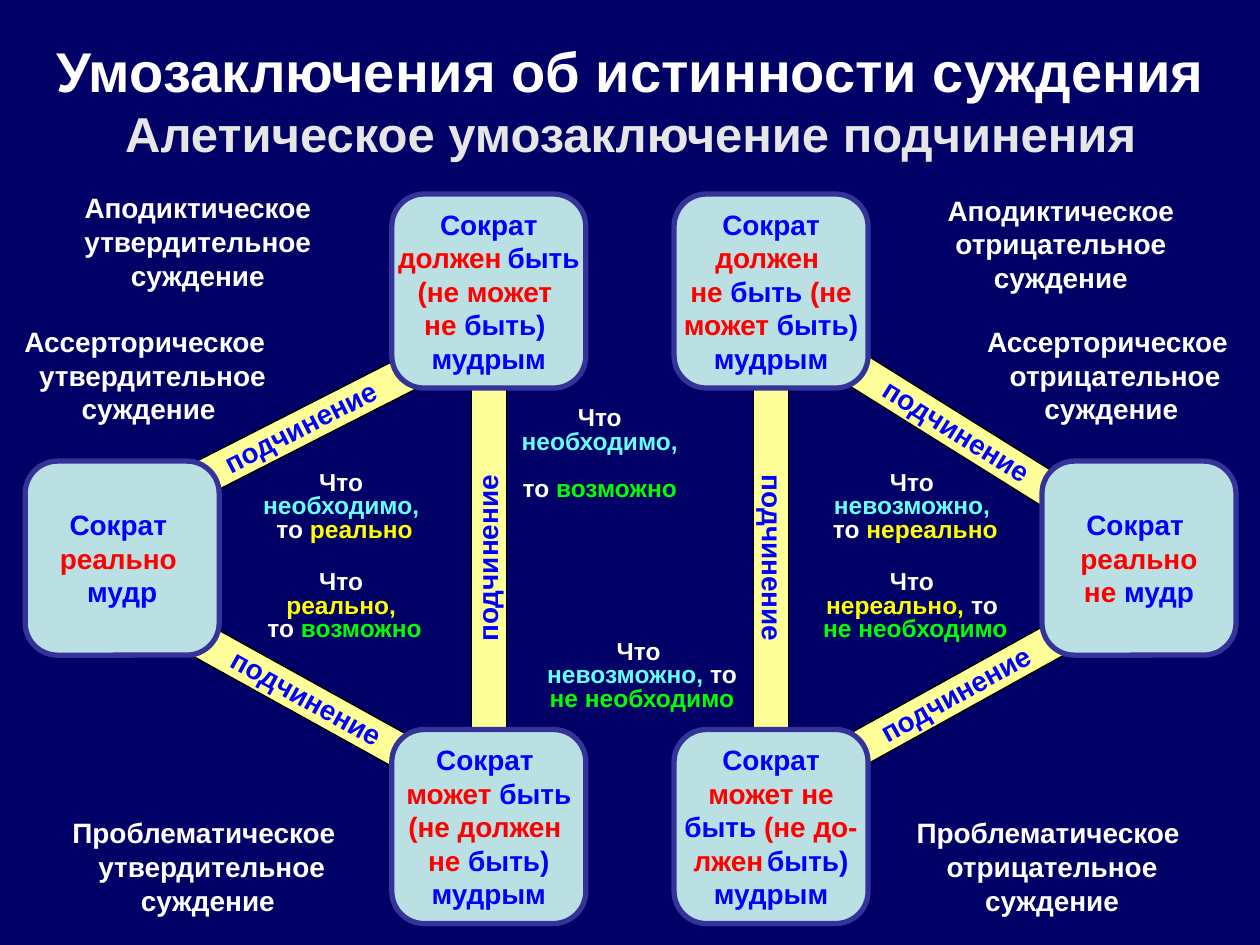
from pptx import Presentation
from pptx.dml.color import RGBColor
from pptx.enum.shapes import MSO_SHAPE
from pptx.enum.text import MSO_ANCHOR, PP_ALIGN
from pptx.util import Inches, Pt

HUES = {
    "back": "000066", "bar": "FFFF99", "black": "000000",
    "card": "BBE0E3", "edge": "333399", "blue": "0000FF",
    "red": "FF0000", "white": "FFFFFF", "gray": "E6E6E6",
    "cyan": "66FFFF", "gold": "FFFF00", "green": "00FF00",
}
SIDE = 1.54


def hue(name):
    return RGBColor.from_string(HUES[name])


def write(frame, runs, size, pads, wrap=True, anchor=MSO_ANCHOR.MIDDLE, gap=None):
    """Fill one centred paragraph; each run is (colour, text[, size])."""
    frame.word_wrap = wrap
    frame.vertical_anchor = anchor
    frame.margin_left = frame.margin_right = Inches(pads[0])
    frame.margin_top, frame.margin_bottom = Inches(pads[1]), Inches(pads[2])
    para = frame.paragraphs[0]
    para.alignment = PP_ALIGN.CENTER
    if gap:
        para.line_spacing = gap
    font = para.font
    font.name, font.size, font.bold = "Arial", Pt(size), True
    for tone, text, *own in runs:
        for i, line in enumerate(text.split("\n")):
            if i:
                para.add_line_break()
            if line:
                run = para.add_run()
                run.text = line
                run.font.color.rgb = hue(tone)
                if own:
                    run.font.size = Pt(own[0])


def block(slide, kind, box, fill, edge, width):
    shape = slide.shapes.add_shape(kind, *map(Inches, box))
    shape.shadow.inherit = False
    shape.fill.solid()
    shape.fill.fore_color.rgb = hue(fill)
    shape.line.color.rgb = hue(edge)
    shape.line.width = Pt(width)
    return shape


def add_bar(slide, box, turn, text):
    bar = block(slide, MSO_SHAPE.RECTANGLE, box, "bar", "black", 0.75)
    bar.rotation = turn
    write(bar.text_frame, [("blue", text)], 16, (0.1, 0.02, 0.05), wrap=False)


def add_card(slide, left, top, runs, pad, wrap):
    box = (left, top, SIDE, SIDE)
    card = block(slide, MSO_SHAPE.ROUNDED_RECTANGLE, box, "card", "edge", 3)
    write(card.text_frame, runs, 16, (pad, 0.05, 0.05), wrap)


def add_note(slide, box, runs):
    note = slide.shapes.add_textbox(*map(Inches, box))
    write(note.text_frame, runs, 14, (0.04, 0.05, 0.05),
          anchor=MSO_ANCHOR.TOP, gap=0.8)


def add_label(slide, box, text):
    label = slide.shapes.add_textbox(*map(Inches, box))
    write(label.text_frame, [("white", text)], 16, (0.1, 0.05, 0.05))


def add_title(slide, box):
    title = slide.shapes.title
    title.left, title.top, title.width, title.height = map(Inches, box)
    write(title.text_frame, [
        ("white", "Умозаключения об истинности суждения", 32),
        ("gray", " Алетическое умозаключение подчинения", 28),
    ], 32, (0.1, 0.05, 0.05))


def main():
    deck = Presentation()
    deck.slide_width, deck.slide_height = Inches(10), Inches(7.5)
    slide = deck.slides.add_slide(deck.slide_layouts[5])
    slide.background.fill.solid()
    slide.background.fill.fore_color.rgb = hue("back")
    add_title(slide, (0.11, 0.2, 9.79, 1.18))

    # Links between the cards
    word = "подчинение"
    for left, top, turn in [(1.34, 5.39, 29), (6.5, 5.39, 331),
                            (6.5, 3.27, 32), (1.3, 3.27, 333)]:
        add_bar(slide, (left, top, 2.12, 0.28), turn, " " + word)
    for left, turn in [(4.76, 90), (2.52, 270)]:
        add_bar(slide, (left, 4.29, 2.72, 0.28), turn, word)

    # Cards: outer and inner columns, three rows
    far_l, near_l, near_r, far_r = 0.2, 3.11, 5.35, 8.27
    high, mid, low = 1.54, 3.66, 5.79
    cards = [
        (near_l, high, 0, False, [
            ("blue", "Сократ\n"), ("red", "должен"), ("red", " ", 12),
            ("blue", "быть\n"), ("red", "(не может \nне"),
            ("blue", " быть) \nмудрым")]),
        (near_r, high, 0, False, [
            ("blue", "Сократ\n"), ("red", "должен \nне"), ("blue", " быть "),
            ("red", "(не\nможет "), ("blue", "быть)\nмудрым")]),
        (far_l, mid, 0.08, True, [
            ("blue", "Сократ \n"), ("red", "реально \n"), ("blue", "мудр")]),
        (far_r, mid, 0.08, True, [
            ("blue", "Сократ \n"), ("red", " реально \nне "), ("blue", "мудр")]),
        (near_l, low, 0, True, [
            ("blue", "Сократ \n"), ("red", "может"), ("blue", " быть "),
            ("red", "(не должен \nне"), ("blue", " быть) мудрым")]),
        (near_r, low, 0, True, [
            ("blue", "Сократ\n"), ("red", "может не\n"), ("blue", "быть "),
            ("red", "(не до-\nлжен"), ("red", " ", 8),
            ("blue", "быть)\nмудрым")]),
    ]
    for left, top, pad, wrap, runs in cards:
        add_card(slide, left, top, runs, pad, wrap)

    # Rules of inference beside the links
    notes = [
        (1.73, 3.7, 2.01, [("white", "Что \n"), ("cyan", "необходимо, \n"),
                           ("white", "то "), ("gold", "реально")]),
        (1.73, 4.49, 2.01, [("white", "Что \n"), ("gold", "реально, \n"),
                            ("white", "то "), ("green", "возможно")]),
        (6.26, 3.7, 2.01, [("white", "Что \n"), ("cyan", "невозможно, \n"),
                           ("white", "то "), ("gold", "нереально")]),
        (6.26, 4.49, 2.01, [("white", "Что \n"), ("gold", "нереально, "),
                            ("white", "то \n"), ("green", "не необходимо")]),
        (4.09, 3.19, 1.34, [("white", "Что "), ("cyan", "необходимо, \n"),
                            ("white", "то "), ("green", "возможно")]),
        (4.29, 5.04, 1.61, [("white", "Что \n"), ("cyan", "невозможно, "),
                            ("white", "то "), ("green", "не необходимо")]),
    ]
    for left, top, width, runs in notes:
        add_note(slide, (left, top, width, 0.63), runs)

    # Names of the judgements
    labels = [
        (0.39, 1.46, "Аподиктическое\nутвердительное\nсуждение"),
        (7.24, 1.48, "Аподиктическое\nотрицательное суждение"),
        (0, 2.52, "Ассерторическое \n утвердительное суждение"),
        (7.64, 2.52, "Ассерторическое \n отрицательное суждение"),
        (0.47, 6.42, "Проблематическое \n утвердительное суждение"),
        (7.17, 6.42, "Проблематическое \nотрицательное суждение"),
    ]
    for left, top, text in labels:
        add_label(slide, (left, top, 2.36, 0.91), text)

    deck.save("out.pptx")


if __name__ == "__main__":
    main()
